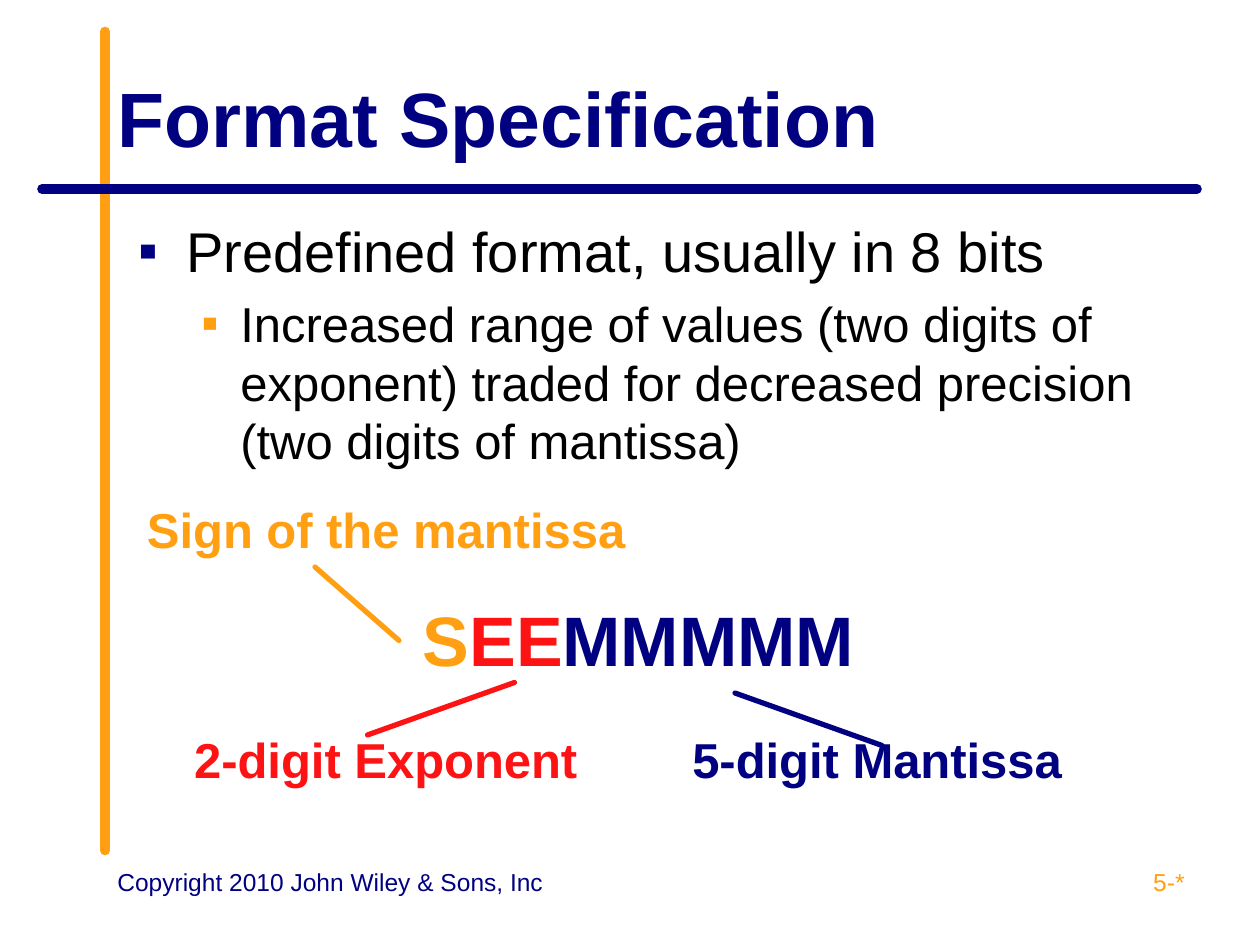
from dataclasses import dataclass

from lxml import etree
from pptx import Presentation
from pptx import util as u
from pptx.dml.color import RGBColor
from pptx.enum import shapes, text
from pptx.oxml.ns import qn


@dataclass(frozen=True)
class Theme:
    font: str = "Arial"
    navy: str = "000080"
    orange: str = "FF9F11"
    red: str = "FD1313"
    black: str = "000000"
    title: int = 44
    pattern: int = 40
    lead: int = 32
    detail: int = 28
    footer: int = 14
    rule: float = 5.5
    pointer: float = 3


@dataclass(frozen=True)
class Box:
    """An area in grid units."""
    left: float
    top: float
    width: float
    height: float


THEME = Theme()
COLUMNS, ROWS = 60, 45
UNIT = u.Inches(10) / COLUMNS
PLAIN_TABLE = "{2D5ABB26-0587-4C30-8999-92F81FD0307C}"


def grid(*values):
    return [u.Emu(round(value * UNIT)) for value in values]


def style(font, size, color, bold=False):
    font.name, font.size, font.bold = THEME.font, u.Pt(size), bold
    font.color.rgb = RGBColor.from_string(color)


def add_line(page, start, end, color, width):
    line = page.shapes.add_connector(
        shapes.MSO_CONNECTOR.STRAIGHT, *grid(*start, *end))
    line.line.color.rgb = RGBColor.from_string(color)
    line.line.width = u.Pt(width)
    line.line._get_or_add_ln().set("cap", "rnd")
    etree.SubElement(line._element.spPr, qn("a:effectLst"))


def add_frame(page, box, anchor=text.MSO_ANCHOR.TOP):
    frame = page.shapes.add_textbox(
        *grid(box.left, box.top, box.width, box.height)).text_frame
    frame.word_wrap = True
    frame.vertical_anchor = anchor
    return frame


def add_label(page, box, words, size, color, bold=False,
              align=text.PP_ALIGN.LEFT, anchor=text.MSO_ANCHOR.TOP):
    para = add_frame(page, box, anchor).paragraphs[0]
    para.text = words
    para.alignment = align
    style(para.runs[0].font, size, color, bold)


def set_bullet(para, color, margin, hanging):
    props = para._p.get_or_add_pPr()
    props.set("marL", str(u.Inches(margin)))
    props.set("indent", str(-u.Inches(hanging)))
    tint = etree.SubElement(props, qn("a:buClr"))
    etree.SubElement(tint, qn("a:srgbClr"), val=color)
    etree.SubElement(props, qn("a:buFont"), typeface=THEME.font)
    etree.SubElement(props, qn("a:buChar"), char="▪")


def add_rules(page, box):
    """Draw the upright and level bars that cross near the box's corner."""
    upright, level = box.left + 3, box.top + 7.5
    add_line(page, (upright, box.top + box.height), (upright, box.top),
             THEME.orange, THEME.rule)
    add_line(page, (box.left + box.width, level), (box.left, level),
             THEME.navy, THEME.rule)


def add_footer(page, box):
    add_label(page, Box(box.left, box.top, 24, box.height),
              "Copyright 2010 John Wiley & Sons, Inc", THEME.footer, THEME.navy)
    add_label(page, Box(box.left + box.width - 14, box.top, 14, box.height),
              "5-*", THEME.footer, THEME.orange, align=text.PP_ALIGN.RIGHT)


def add_body(page, box):
    frame = add_frame(page, box)
    points = [
        ("Predefined format, usually in 8 bits",
         THEME.lead, THEME.navy, 0.38, 0.38),
        ("Increased range of values (two digits of exponent) traded for "
         "decreased precision (two digits of mantissa)",
         THEME.detail, THEME.orange, 0.81, 0.31),
    ]
    for level, (words, size, color, margin, hanging) in enumerate(points):
        para = frame.add_paragraph() if level else frame.paragraphs[0]
        para.text = words
        para.level = level
        if level:
            para.space_before = u.Pt(5.6)
        set_bullet(para, color, margin, hanging)
        style(para.runs[0].font, size, THEME.black)


def fill_cell(cell, spans, size, spacing=None, align=text.PP_ALIGN.CENTER):
    cell.margin_left = cell.margin_right = 0
    cell.margin_top = cell.margin_bottom = 0
    cell.fill.background()
    para = cell.text_frame.paragraphs[0]
    para.alignment = align
    para.line_spacing = spacing
    for words, color in spans:
        span = para.add_run()
        span.text = words
        style(span.font, size, color, bold=True)


def add_format_diagram(page, box):
    """Place the digit pattern, its captions and the lines joining them."""
    table = page.shapes.add_table(
        3, 2, *grid(box.left, box.top, box.width, box.height)).table
    table.first_row = table.horz_banding = False
    table._tbl.tblPr.find(qn("a:tableStyleId")).text = PLAIN_TABLE
    for column, width in zip(table.columns, (3.79, 4.01)):
        column.width = u.Inches(width)
    for row, height in zip(table.rows, (0.57, 1.02, 0.82)):
        row.height = u.Inches(height)
    for row in range(2):
        table.cell(row, 0).merge(table.cell(row, 1))

    fill_cell(table.cell(0, 0), [("Sign of the mantissa", THEME.orange)],
              THEME.detail, align=text.PP_ALIGN.LEFT)
    fill_cell(table.cell(1, 0),
              [("S", THEME.orange), ("EE", THEME.red), ("MMMMM", THEME.navy)],
              THEME.pattern, 1.35)
    captions = [("2-digit Exponent", THEME.red),
                ("5-digit Mantissa", THEME.navy)]
    for column, caption in enumerate(captions):
        fill_cell(table.cell(2, column), [caption], THEME.detail, 1.55)

    pointers = [((8, 3), (12, 6.5), THEME.orange),
                ((35, 11.5), (28, 9), THEME.navy),
                ((10.5, 11), (17.5, 8.5), THEME.red)]
    for start, end, color in pointers:
        ends = [(box.left + x, box.top + y) for x, y in (start, end)]
        add_line(page, *ends, color, THEME.pointer)


def main():
    deck = Presentation()
    deck.slide_width, deck.slide_height = grid(COLUMNS, ROWS)
    page = deck.slides.add_slide(deck.slide_layouts[6])
    add_rules(page, Box(2, 1.5, 55, 39))
    add_label(page, Box(5, 1.8, 52, 7.5), "Format Specification",
              THEME.title, THEME.navy, bold=True,
              anchor=text.MSO_ANCHOR.MIDDLE)
    add_body(page, Box(6, 10, 51, 29.7))
    add_format_diagram(page, Box(7, 24, 46.8, 14.46))
    add_footer(page, Box(5, 41, 52, 3.1))
    deck.save("out.pptx")


if __name__ == "__main__":
    main()
